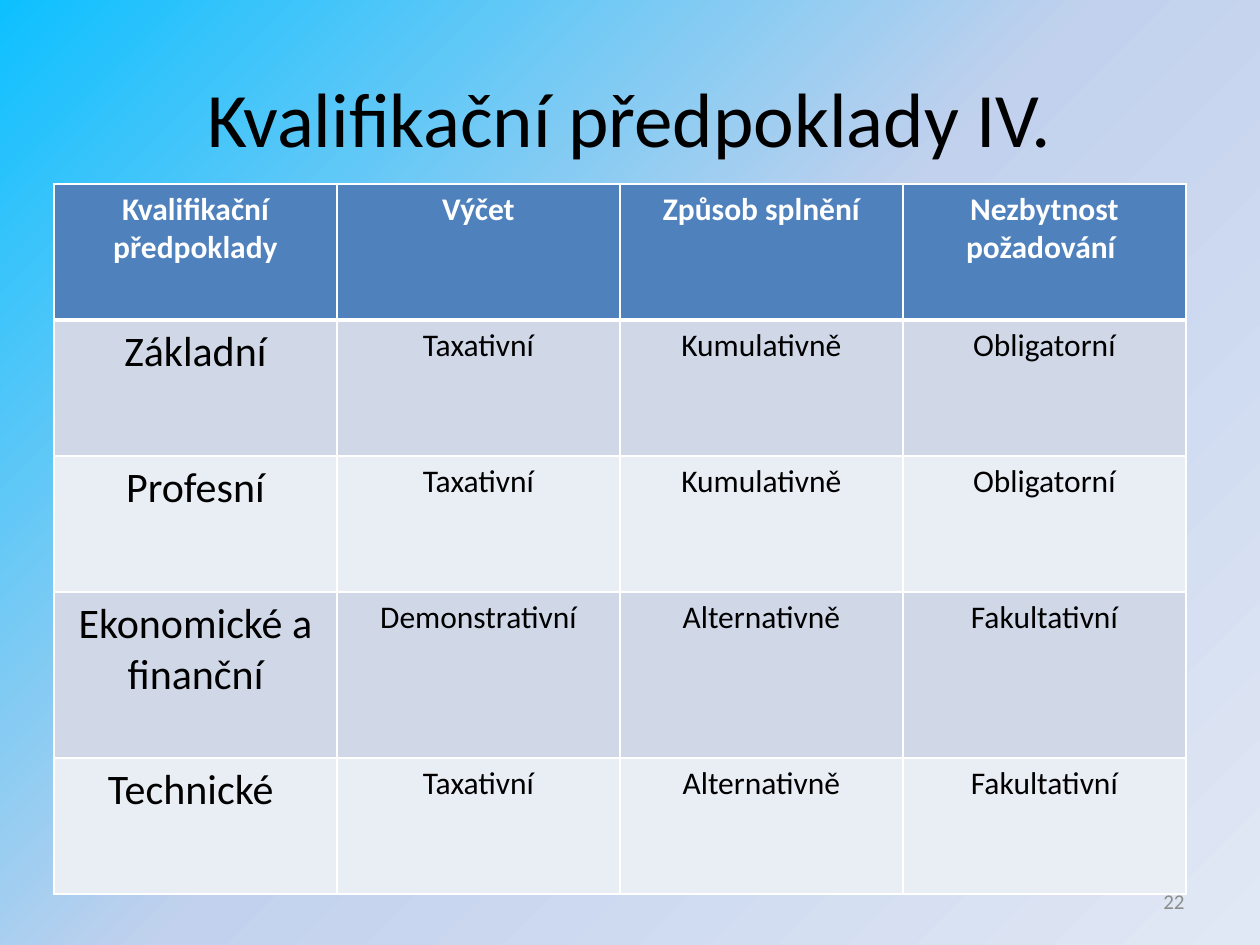
from copy import deepcopy

from lxml.etree import SubElement as Sub
from pptx import Presentation
from pptx.dml.color import RGBColor
from pptx.enum.text import MSO_ANCHOR as Anchor, PP_ALIGN as Align
from pptx.oxml.ns import qn
from pptx.util import Emu, Pt

SCALE = 914400 / 126
FONT = "Calibri"
WHITE, BLACK, GREY = "FFFFFF", "000000", "8C8C8C"
HEAD, BANDS = "4F81BD", ("D0D8E8", "E9EDF4")
STOPS = ((0, "0DC0FF"), (0.5, "C2D1ED"), (1, "E1E8F5"))
ROWS = (
    ("Kvalifikační předpoklady", "Výčet", "Způsob splnění", "Nezbytnost požadování "),
    ("Základní", "Taxativní", "Kumulativně", "Obligatorní"),
    ("Profesní", "Taxativní", "Kumulativně", "Obligatorní"),
    ("Ekonomické a finanční", "Demonstrativní", "Alternativně", "Fakultativní"),
    ("Technické ", "Taxativní", "Alternativně", "Fakultativní"),
)
HEIGHTS = (136, 136, 136, 166, 136)
WIDTH = 283


def px(num):
    return Emu(round(num * SCALE))


def rgb(code):
    return RGBColor.from_string(code)


def place(shape, *box):
    for name, num in zip(("left", "top", "width", "height"), box):
        setattr(shape, name, px(num))


def write(frame, text, size, color, align=Align.CENTER, bold=False):
    para = frame.paragraphs[0]
    para.alignment = align
    run = para.add_run()
    run.text = text
    for name, value in {"name": FONT, "size": Pt(size), "bold": bold}.items():
        setattr(run.font, name, value)
    run.font.color.rgb = rgb(color)


def paint(slide):
    """Fill the background with a diagonal gradient of three stops."""
    fill = slide.background.fill
    fill.gradient()
    fill.gradient_angle = 315
    stops = slide.element.find(".//" + qn("a:gsLst"))
    stops.append(deepcopy(stops[-1]))
    for stop, (pos, color) in zip(fill.gradient_stops, STOPS):
        stop.position = pos
        stop.color.rgb = rgb(color)


def edge(cell, side, width):
    line = Sub(cell._tc.get_or_add_tcPr(), qn("a:ln" + side), w=str(Pt(width)))
    Sub(Sub(line, qn("a:solidFill")), qn("a:srgbClr"), val=WHITE)


def add_title(slide, text):
    title = slide.shapes.title
    place(title, 63, 38, 1134, 157)
    title.text_frame.vertical_anchor = Anchor.MIDDLE
    write(title.text_frame, text, 44, BLACK)


def add_cell(cell, text, row, col):
    thick = {0: "B", 1: "T"}.get(row)
    for side in "LRTB":
        edge(cell, side, 3 if side == thick else 1)
    cell.fill.solid()
    cell.fill.fore_color.rgb = rgb(BANDS[(row - 1) % 2] if row else HEAD)
    size = 24 if row and col == 0 else 18
    write(cell.text_frame, text, size, BLACK if row else WHITE, bold=row == 0)


def add_grid(slide):
    cols = len(ROWS[0])
    box = map(px, (54, 184, WIDTH * cols, sum(HEIGHTS)))
    table = slide.shapes.add_table(len(ROWS), cols, *box).table
    for col in table.columns:
        col.width = px(WIDTH)
    for row, (texts, height) in enumerate(zip(ROWS, HEIGHTS)):
        table.rows[row].height = px(height)
        for col, text in enumerate(texts):
            add_cell(table.cell(row, col), text, row, col)


def add_number(slide, text):
    frame = slide.shapes.add_textbox(*map(px, (903, 876, 294, 50))).text_frame
    frame.word_wrap = True
    frame.vertical_anchor = Anchor.MIDDLE
    write(frame, text, 12, GREY, Align.RIGHT)


def main():
    deck = Presentation()
    deck.slide_width, deck.slide_height = px(1260), px(945)
    slide = deck.slides.add_slide(deck.slide_layouts[5])
    paint(slide)
    add_title(slide, "Kvalifikační předpoklady IV.")
    add_grid(slide)
    add_number(slide, "22")
    deck.save("out.pptx")


if __name__ == "__main__":
    main()
